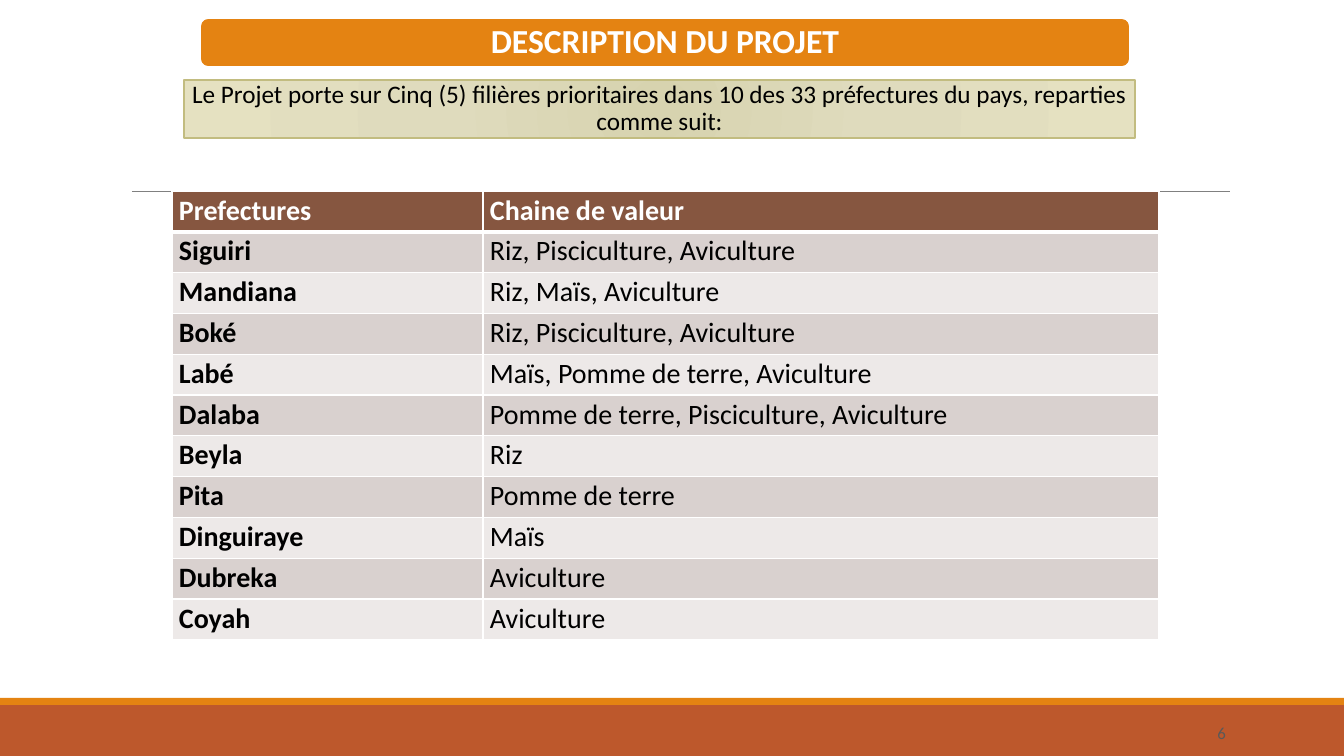
import collections

import lxml.etree
import pptx
import pptx.dml.color
import pptx.enum.shapes
import pptx.enum.text
import pptx.oxml
import pptx.oxml.ns
import pptx.util

Box = collections.namedtuple("Box", "left top width height")
EMU_PER_PX = 914400 / 100.8
SHAPES = pptx.enum.shapes.MSO_SHAPE
ALIGN = pptx.enum.text.PP_ALIGN
MIDDLE = pptx.enum.text.MSO_ANCHOR.MIDDLE


class Theme:
    font = "Calibri"
    white, black = "FFFFFF", "000000"
    orange, rust = "E48312", "BD582C"
    rule, number = "808080", "595959"
    header, bands = "865640", ("D9D1CF", "EDE9E8")
    note_line = "C2BC80"
    note_stops = ((0, "D7D3AF"), (45, "DFDBBD"), (100, "E5E1C1"))
    title_size, note_size, table_size, number_size = 24, 18, 20, 12


HEADINGS = ("Prefectures", "Chaine de valeur")
VALUE_CHAINS = (
    ("Siguiri", "Riz, Pisciculture, Aviculture"),
    ("Mandiana", "Riz, Maïs, Aviculture"),
    ("Boké", "Riz, Pisciculture, Aviculture"),
    ("Labé", "Maïs, Pomme de terre, Aviculture"),
    ("Dalaba", "Pomme de terre, Pisciculture, Aviculture"),
    ("Beyla", "Riz"),
    ("Pita", "Pomme de terre"),
    ("Dinguiraye", "Maïs"),
    ("Dubreka", "Aviculture"),
    ("Coyah", "Aviculture"),
)


def px(length):
    return pptx.util.Emu(round(length * EMU_PER_PX))


def rgb(color):
    return pptx.dml.color.RGBColor.from_string(color)


def set_all(target, values):
    for name, value in values.items():
        setattr(target, name, value)


def margins(across, down):
    return {"margin_left": px(across), "margin_right": px(across),
            "margin_top": px(down), "margin_bottom": px(down)}


def write(frame, text, size, color, bold=False, align=ALIGN.LEFT, spacing=1.0):
    para = frame.paragraphs[0]
    set_all(para, {"alignment": align, "line_spacing": spacing})
    span = para.add_run()
    span.text = text
    set_all(span.font, {"name": Theme.font, "size": pptx.util.Pt(size), "bold": bold})
    span.font.color.rgb = rgb(color)


def add_block(page, kind, box, fill, line=None, line_width=1):
    block = page.shapes.add_shape(kind, *map(px, box))
    block.shadow.inherit = False
    block.fill.solid()
    block.fill.fore_color.rgb = rgb(fill)
    if line:
        block.line.color.rgb = rgb(line)
        block.line.width = pptx.util.Pt(line_width)
    else:
        block.line.fill.background()
    return block


def apply_radial_gradient(block, stops):
    stop_xml = "".join(
        f'<a:gs pos="{position * 1000}"><a:srgbClr val="{color}"/></a:gs>'
        for position, color in stops)
    gradient = pptx.oxml.parse_xml(
        f'<a:gradFill {pptx.oxml.ns.nsdecls("a")} rotWithShape="1"><a:gsLst>{stop_xml}</a:gsLst>'
        '<a:path path="circle"><a:fillToRect l="100000" t="100000" r="100000" b="100000"/>'
        '</a:path></a:gradFill>')
    properties = block.element.spPr
    solid = properties.find(pptx.oxml.ns.qn("a:solidFill"))
    properties.replace(solid, gradient)


def add_footer(page, box):
    stripe = 7
    add_block(page, SHAPES.RECTANGLE,
              Box(box.left, box.top + stripe, box.width, box.height - stripe), Theme.rust)
    add_block(page, SHAPES.RECTANGLE, box._replace(height=stripe), Theme.orange)
    number = page.shapes.add_textbox(
        *map(px, Box(box.left + box.width - 218, box.top + 20, 100, 30)))
    set_all(number.text_frame, {"word_wrap": True, "vertical_anchor": MIDDLE, **margins(0, 0)})
    write(number.text_frame, "6", Theme.number_size, Theme.number, align=ALIGN.RIGHT)


def add_rule(page, left, right, top):
    rule = page.shapes.add_connector(
        pptx.enum.shapes.MSO_CONNECTOR.STRAIGHT, *map(px, (left, top, right, top)))
    rule.line.color.rgb = rgb(Theme.rule)
    rule.line.width = pptx.util.Pt(0.5)
    lxml.etree.SubElement(rule.element.spPr, pptx.oxml.ns.qn("a:effectLst"))


def add_title(page, box):
    banner = add_block(page, SHAPES.ROUNDED_RECTANGLE, box, Theme.orange, Theme.white, 1.25)
    set_all(banner.text_frame, {"word_wrap": True, "vertical_anchor": MIDDLE, **margins(10, 0)})
    write(banner.text_frame, "DESCRIPTION DU PROJET", Theme.title_size, Theme.white,
          bold=True, align=ALIGN.CENTER, spacing=0.9)


def add_note(page, box):
    note = add_block(page, SHAPES.RECTANGLE, box, Theme.white, Theme.note_line)
    apply_radial_gradient(note, Theme.note_stops)
    set_all(note.text_frame, {"word_wrap": True, "vertical_anchor": MIDDLE, **margins(5, 5)})
    write(note.text_frame,
          "Le Projet porte sur Cinq (5) filières prioritaires dans 10 des 33 préfectures "
          "du pays, reparties comme suit:",
          Theme.note_size, Theme.black, align=ALIGN.CENTER, spacing=0.9)


def add_borders(cell, widths):
    """Draw white cell borders, with widths in points by side letter."""
    properties = cell._tc.get_or_add_tcPr()
    for index, side in enumerate("LRTB"):
        properties.insert(index, pptx.oxml.parse_xml(
            f'<a:ln{side} {pptx.oxml.ns.nsdecls("a")} w="{pptx.util.Pt(widths[side])}">'
            f'<a:solidFill><a:srgbClr val="{Theme.white}"/></a:solidFill></a:ln{side}>'))


def add_value_table(page, box, first_width):
    rows = (HEADINGS, *VALUE_CHAINS)
    table = page.shapes.add_table(len(rows), len(HEADINGS), *map(px, box)).table
    for column, width in zip(table.columns, (first_width, box.width - first_width)):
        column.width = px(width)
    for row_index, texts in enumerate(rows):
        table.rows[row_index].height = px(box.height / len(rows))
        is_header = row_index == 0
        fill = Theme.header if is_header else Theme.bands[(row_index - 1) % 2]
        color = Theme.white if is_header else Theme.black
        widths = {"L": 1, "R": 1, "T": 3 if row_index == 1 else 1, "B": 3 if is_header else 1}
        for column_index, text in enumerate(texts):
            cell = table.cell(row_index, column_index)
            set_all(cell, margins(7, 0))
            cell.fill.solid()
            cell.fill.fore_color.rgb = rgb(fill)
            add_borders(cell, widths)
            write(cell.text_frame, text, Theme.table_size, color,
                  bold=is_header or column_index == 0, spacing=1.07)


def main():
    deck = pptx.Presentation()
    set_all(deck, {"slide_width": px(1344), "slide_height": px(756)})
    page = deck.slides.add_slide(deck.slide_layouts[6])
    add_footer(page, Box(0, 698, 1344, 58))
    add_rule(page, 132, 1230, 191)
    add_title(page, Box(200, 18, 930, 49))
    add_note(page, Box(184, 80, 951, 58))
    add_value_table(page, Box(172, 191, 987, 449), 311)
    deck.save("out.pptx")


if __name__ == "__main__":
    main()
